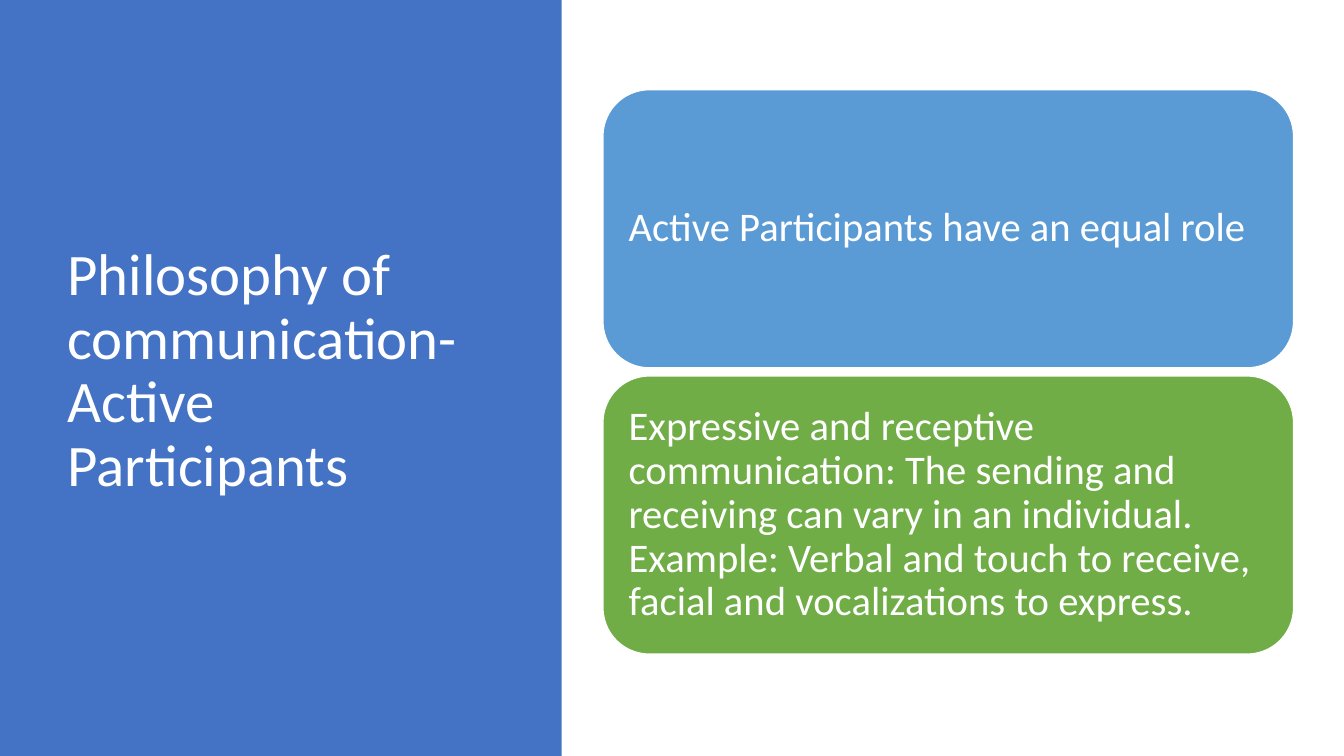
from dataclasses import dataclass

from pptx import Presentation
from pptx.dml.color import RGBColor
from pptx.enum.shapes import MSO_SHAPE
from pptx.enum.text import MSO_ANCHOR, PP_ALIGN
from pptx.util import Inches, Pt

RECTANGLE = MSO_SHAPE.RECTANGLE
ROUNDED = MSO_SHAPE.ROUNDED_RECTANGLE
MIDDLE = MSO_ANCHOR.MIDDLE
LEFT = PP_ALIGN.LEFT

FONT = "Calibri"
WHITE = "FFFFFF"
PANEL_BLUE = "4472C4"
CARD_LEFT, CARD_TOP = 5.98, 0.89
CARD_WIDTH, CARD_HEIGHT = 6.85, 2.76
CARD_STEP = 2.84
CARD_INSET = 0.12


@dataclass
class Card:
    text: str
    fill: str


CARDS = [
    Card("Active Participants have an equal role", "5B9BD5"),
    Card(
        "Expressive and receptive communication: The sending and receiving "
        "can vary in an individual. Example: Verbal and touch to receive, "
        "facial and vocalizations to express.",
        "70AD47",
    ),
]


def color(value: str) -> RGBColor:
    return RGBColor.from_string(value)


def add_filled(page, kind, left: float, top: float, width: float, height: float, fill: str):
    shape = page.shapes.add_shape(
        kind, Inches(left), Inches(top), Inches(width), Inches(height)
    )
    shape.shadow.inherit = False
    shape.fill.solid()
    shape.fill.fore_color.rgb = color(fill)
    return shape


def write_text(shape, text: str, size: float) -> None:
    frame = shape.text_frame
    frame.word_wrap = True
    frame.vertical_anchor = MIDDLE
    frame.text = text
    para = frame.paragraphs[0]
    para.alignment = LEFT
    para.line_spacing = 0.9
    para.font.name = FONT
    para.font.size = Pt(size)
    para.font.color.rgb = color(WHITE)


def add_panel(page) -> None:
    """Draw the left panel behind the title."""
    panel = add_filled(page, RECTANGLE, 0, 0, 5.57, 7.5, PANEL_BLUE)
    panel.line.fill.background()
    page.shapes.title._element.addprevious(panel._element)


def add_title(page) -> None:
    title = page.shapes.title
    title.left, title.top = Inches(0.57), Inches(0.68)
    title.width, title.height = Inches(4.16), Inches(6.02)
    write_text(title, "Philosophy of communication-Active Participants", 42)


def add_card(page, card: Card, top: float) -> None:
    box = add_filled(page, ROUNDED, CARD_LEFT, top, CARD_WIDTH, CARD_HEIGHT, card.fill)
    box.line.color.rgb = color(WHITE)
    box.line.width = Pt(1)
    write_text(box, card.text, 29)
    frame = box.text_frame
    frame.margin_left = frame.margin_right = Inches(CARD_INSET)
    frame.margin_top = frame.margin_bottom = Inches(CARD_INSET)


def main() -> None:
    deck = Presentation()
    deck.slide_width, deck.slide_height = Inches(13.33), Inches(7.5)
    page = deck.slides.add_slide(deck.slide_layouts.get_by_name("Title Only"))
    add_panel(page)
    add_title(page)
    for index, card in enumerate(CARDS):
        add_card(page, card, CARD_TOP + index * CARD_STEP)
    deck.save("out.pptx")


if __name__ == "__main__":
    main()
